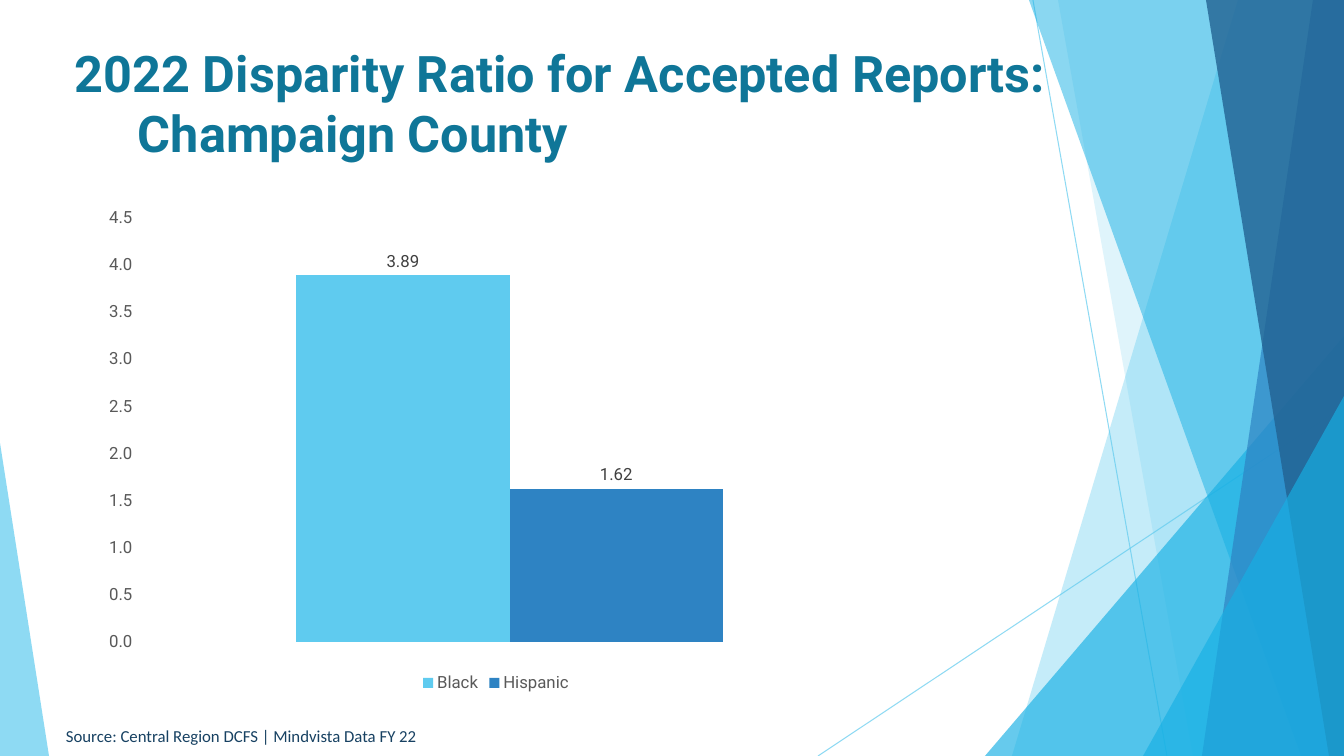
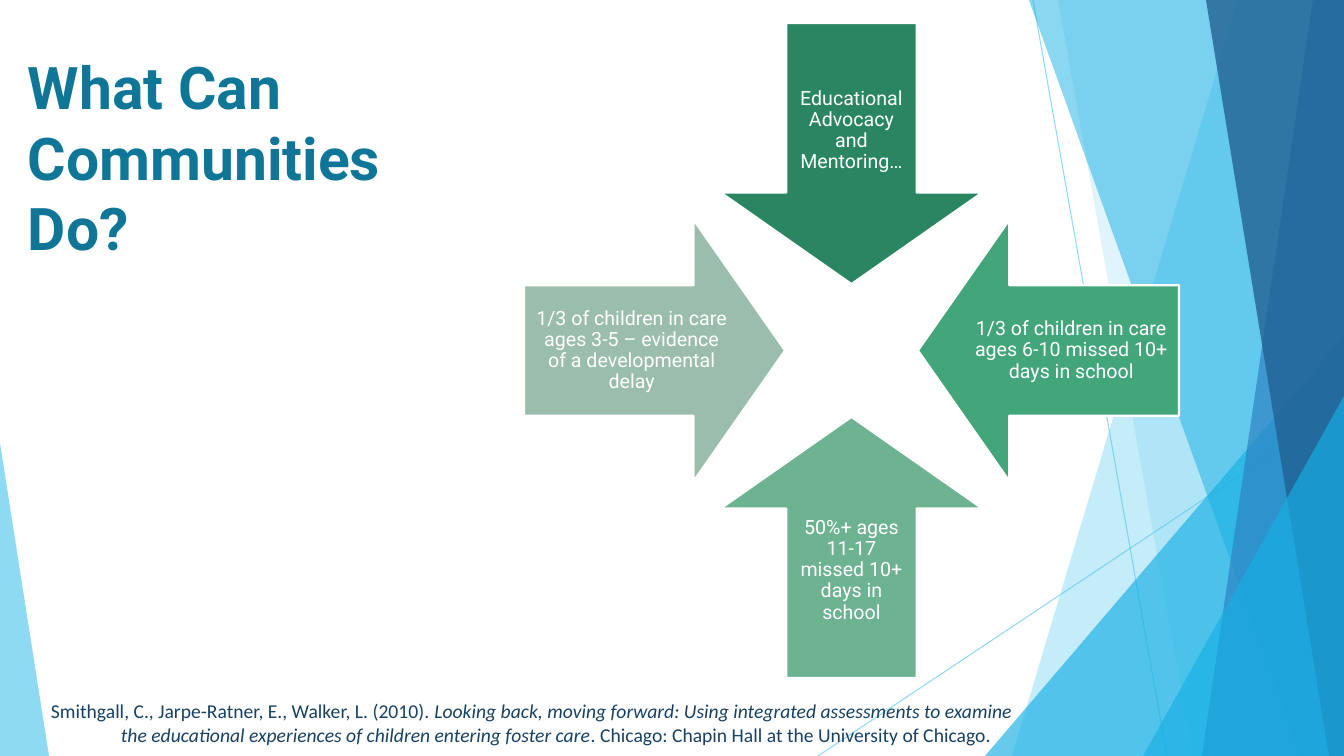
import pptx
import pptx.chart.data
import pptx.dml.color
import pptx.enum.chart
import pptx.enum.shapes
import pptx.enum.text
import pptx.oxml.ns
import pptx.util
from lxml import etree

SLIDE_W, SLIDE_H = 1344, 756
EMU_PER_PX = 12192000 / SLIDE_W

COLOURS = {
    "sky": "5FCBEF", "cyan": "17B0E4", "blue": "2E83C3", "navy": "226292",
    "title": "0F7698", "note": "174162", "axis": "595959", "label": "404040",
    "white": "FFFFFF",
    "green1": "2A8661", "green2": "43A57A", "green3": "6DB291", "green4": "9BBDAB",
}
HEAD_FONT, NOTE_FONT = "Roboto", "Calibri"
SHAPES = pptx.enum.shapes.MSO_SHAPE
ANCHORS = pptx.enum.text.MSO_ANCHOR

# Shared background: x1, y1, x2, y2 of the thin lines
RAYS = [(1033, 0, 1167, SLIDE_H), (SLIDE_W, 406, 818, SLIDE_H)]
# Facets run from an edge (top x, bottom x) to the right side of the slide;
# corners are right triangles (box, apex position). Back to front.
BACKDROP = [
    ("facet", (1238, 1012), "sky", 36),
    ("facet", (1058, 1193), "sky", 20),
    ("corner", (985, 336, 359, 420, 1), "cyan", 66),
    ("facet", (1029, 1301), "cyan", 50),
    ("facet", (1313, 1202), "blue", 70),
    ("facet", (1206, 1329), "navy", 80),
    ("corner", (1143, 396, 201, 360, 1), "cyan", 66),
    ("corner", (0, 443, 49, 313, 0), "sky", 70),
]

# Slide 1: paragraphs with their left indent
RATIO_TITLE = [("2022 Disparity Ratio for Accepted Reports:", 0), ("Champaign County", 63)]
RATIOS = [("Black", 3.89, "sky"), ("Hispanic", 1.62, "blue")]
RATIO_SOURCE = [("Source: Central Region DCFS | Mindvista Data FY 22", False)]

# Slide 2
ACTION_TITLE = [("What Can Communities Do?", 0)]
# Arrow preset, steps right and down from the centre, fill, text
ACTIONS = [
    (SHAPES.DOWN_ARROW, 0, -1, "green1", "Educational Advocacy and Mentoring…"),
    (SHAPES.LEFT_ARROW, 1, 0, "green2",
     "1/3 of children in care ages 6-10 missed 10+ days in school"),
    (SHAPES.UP_ARROW, 0, 1, "green3", "50%+ ages 11-17 missed 10+ days in school"),
    (SHAPES.RIGHT_ARROW, -1, 0, "green4",
     "1/3 of children in care ages 3-5 – evidence of a developmental delay"),
]
ARROW_SIZE, ARROW_STEP = 261, 197
ARROWS_LEFT, ARROWS_TOP = 721, 220
CITATION = [
    ("Smithgall, C., Jarpe-Ratner, E., Walker, L. (2010). ", False),
    ("Looking back, moving forward: Using integrated assessments to examine "
     "the educational experiences of children entering foster care", True),
    (". Chicago: Chapin Hall at the University of Chicago.", False),
]


def px(length):
    return pptx.util.Emu(round(length * EMU_PER_PX))


def rgb(name):
    return pptx.dml.color.RGBColor.from_string(COLOURS[name])


def style_font(font, size, colour, face=HEAD_FONT, bold=False, italic=False):
    font.size, font.name = pptx.util.Pt(size), face
    font.bold, font.italic = bold, italic
    font.color.rgb = rgb(colour)


def paint(fill, colour):
    fill.solid()
    fill.fore_color.rgb = rgb(colour)


def set_opacity(element, percent):
    colour = next(element.iter(pptx.oxml.ns.qn("a:srgbClr")))
    etree.SubElement(colour, pptx.oxml.ns.qn("a:alpha"), val=str(percent * 1000))


def set_indent(paragraph, left, first=0):
    properties = paragraph._p.get_or_add_pPr()
    properties.set("marL", str(px(left)))
    properties.set("indent", str(px(first)))


def add_backdrop(slide):
    for x1, y1, x2, y2 in RAYS:
        ray = slide.shapes.add_connector(
            pptx.enum.shapes.MSO_CONNECTOR.STRAIGHT, px(x1), px(y1), px(x2), px(y2))
        ray.line.color.rgb = rgb("sky")
        ray.line.width = pptx.util.Pt(0.75)
        properties = ray._element.spPr
        set_opacity(properties, 70)
        etree.SubElement(properties, pptx.oxml.ns.qn("a:effectLst"))
    for kind, place, colour, opacity in BACKDROP:
        if kind == "facet":
            top_x, bottom_x = place
            outline = slide.shapes.build_freeform(top_x, 0, scale=EMU_PER_PX)
            outline.add_line_segments(
                [(SLIDE_W, 0), (SLIDE_W, SLIDE_H), (bottom_x, SLIDE_H)], close=True)
            pane = outline.convert_to_shape()
        else:
            *box, apex = place
            pane = slide.shapes.add_shape(SHAPES.ISOSCELES_TRIANGLE, *map(px, box))
            pane.adjustments[0] = apex
        pane.shadow.inherit = False
        paint(pane.fill, colour)
        set_opacity(pane._element.spPr, opacity)
        pane.line.fill.background()


def add_text_frame(slide, box, anchor):
    frame = slide.shapes.add_textbox(*map(px, box)).text_frame
    frame.word_wrap = True
    frame.vertical_anchor = anchor
    return frame


def add_title(slide, lines, box, size, anchor):
    frame = add_text_frame(slide, box, anchor)
    frame.text = "\n".join(text for text, _ in lines)
    for paragraph, (_, indent) in zip(frame.paragraphs, lines):
        set_indent(paragraph, indent)
        style_font(paragraph.runs[0].font, size, "title", bold=True)


def add_note(slide, parts, box, size, hanging=0):
    paragraph = add_text_frame(slide, box, ANCHORS.TOP).paragraphs[0]
    set_indent(paragraph, hanging, -hanging)
    for text, italic in parts:
        run = paragraph.add_run()
        run.text = text
        style_font(run.font, size, "note", NOTE_FONT, italic=italic)


def add_ratio_chart(slide, box):
    ratios = pptx.chart.data.CategoryChartData()
    ratios.categories = ["1"]
    for group, ratio, _ in RATIOS:
        ratios.add_series(group, [ratio])
    chart = slide.shapes.add_chart(
        pptx.enum.chart.XL_CHART_TYPE.COLUMN_CLUSTERED, *map(px, box), ratios).chart
    chart.has_title = False
    style_font(chart.font, 12, "axis")

    # Axes and legend
    chart.category_axis.visible = False
    scale = chart.value_axis
    scale.minimum_scale, scale.maximum_scale, scale.major_unit = 0, 4.5, 0.5
    scale.has_major_gridlines = False
    scale.major_tick_mark = pptx.enum.chart.XL_TICK_MARK.NONE
    scale.format.line.fill.background()
    scale.tick_labels.number_format = "0.0"
    scale.tick_labels.number_format_is_linked = False
    style_font(scale.tick_labels.font, 12, "axis")
    chart.has_legend = True
    chart.legend.position = pptx.enum.chart.XL_LEGEND_POSITION.BOTTOM
    chart.legend.include_in_layout = False
    style_font(chart.legend.font, 12, "axis")

    # Columns and their values
    columns = chart.plots[0]
    columns.gap_width, columns.overlap = 150, 0
    columns.vary_by_categories = False
    for series, (_, _, colour) in zip(columns.series, RATIOS):
        paint(series.format.fill, colour)
        labels = series.data_labels
        labels.show_value = True
        labels.position = pptx.enum.chart.XL_LABEL_POSITION.OUTSIDE_END
        labels.number_format = "#,##0.00"
        labels.number_format_is_linked = False
        style_font(labels.font, 12, "label")


def add_action_arrows(slide):
    for preset, right, down, colour, text in ACTIONS:
        arrow = slide.shapes.add_shape(
            preset, px(ARROWS_LEFT + right * ARROW_STEP),
            px(ARROWS_TOP + down * ARROW_STEP), px(ARROW_SIZE), px(ARROW_SIZE))
        arrow.adjustments[0], arrow.adjustments[1] = 0.5, 0.35
        arrow.shadow.inherit = False
        paint(arrow.fill, colour)
        arrow.line.color.rgb = rgb("white")
        arrow.line.width = pptx.util.Pt(1.5)
        frame = arrow.text_frame
        frame.word_wrap = True
        frame.vertical_anchor = ANCHORS.MIDDLE
        frame.margin_left = frame.margin_right = px(11)
        frame.margin_top = frame.margin_bottom = px(11)
        frame.text = text
        paragraph = frame.paragraphs[0]
        paragraph.alignment = pptx.enum.text.PP_ALIGN.CENTER
        paragraph.line_spacing = 0.9
        style_font(paragraph.runs[0].font, 14, "white")


def main():
    deck = pptx.Presentation()
    deck.slide_width, deck.slide_height = px(SLIDE_W), px(SLIDE_H)
    ratio_slide, action_slide = (
        deck.slides.add_slide(deck.slide_layouts[6]) for _ in range(2))

    # Slide 1: disparity ratio
    add_backdrop(ratio_slide)
    add_title(ratio_slide, RATIO_TITLE, (65, 30, 1037, 145), 36, ANCHORS.MIDDLE)
    add_note(ratio_slide, RATIO_SOURCE, (56, 721, 379, 30), 12)
    add_ratio_chart(ratio_slide, (93, 198, 806, 499))

    # Slide 2: community action
    add_backdrop(action_slide)
    add_title(action_slide, ACTION_TITLE, (18, 46, 378, 201), 42, ANCHORS.TOP)
    add_action_arrows(action_slide)
    add_note(action_slide, CITATION, (41, 694, 985, 57), 14, hanging=70)

    deck.save("out.pptx")


if __name__ == "__main__":
    main()
